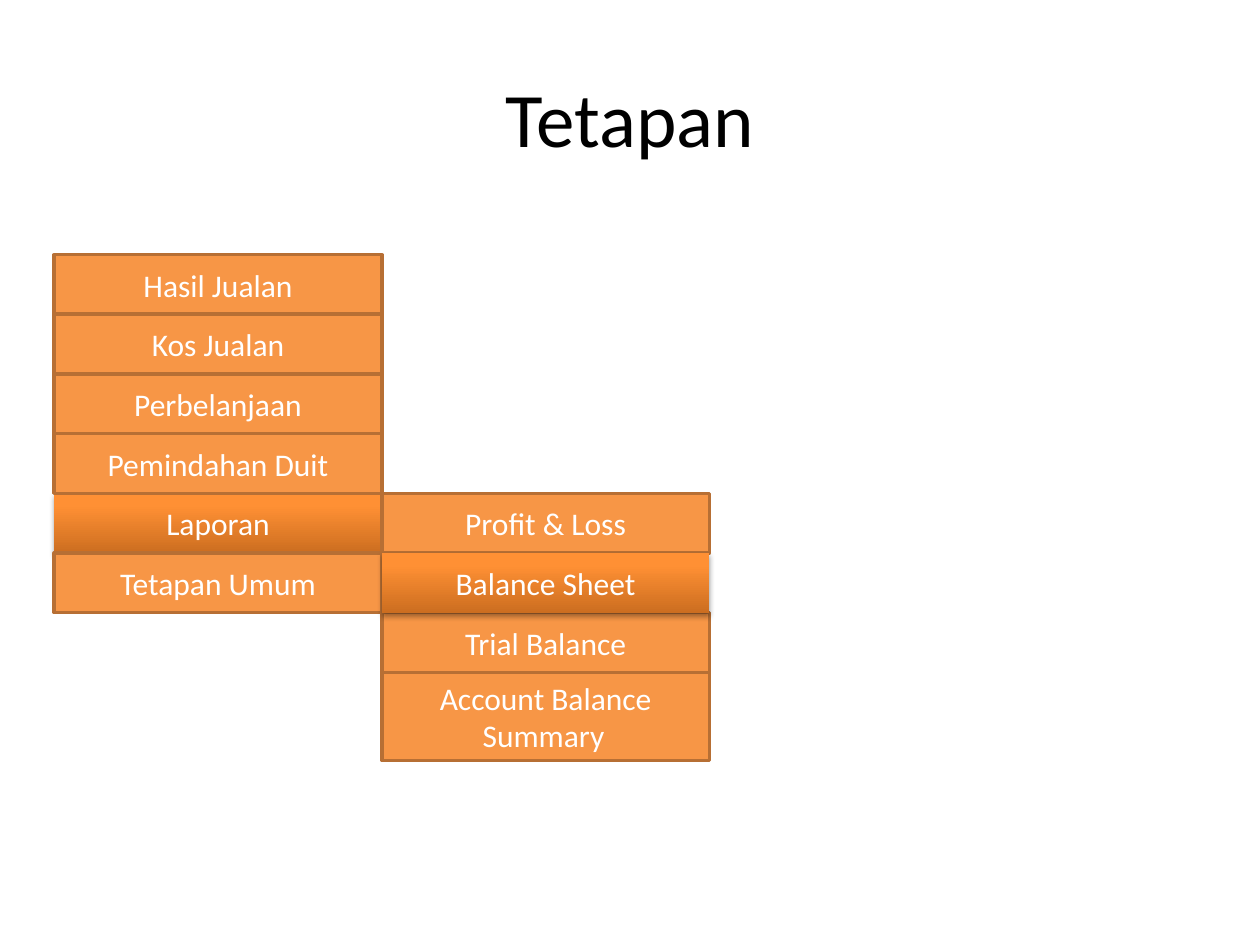
import copy
import dataclasses
import lxml.etree
import pptx
import pptx.dml.color
import pptx.enum.shapes
import pptx.enum.text
import pptx.oxml
import pptx.oxml.ns
import pptx.util

Pt = pptx.util.Pt
qn = pptx.oxml.ns.qn


@dataclasses.dataclass(frozen=True)
class Theme:
    """Colours, font and type sizes of the slide."""
    font: str = "Calibri"
    title: int = 44
    body: int = 18
    ink: str = "000000"
    pale: str = "FFFFFF"
    fill: str = "F79646"
    edge: str = "B76F34"
    glow: tuple = ((0, "CC6E20"), (0.8, "FF9034"), (1, "FF9136"))


THEME = Theme()


def rgb(code):
    """Turn a hex code into a colour."""
    return pptx.dml.color.RGBColor.from_string(code)


def write(shape, text, size, color):
    """Put one centred run of text in a shape."""
    frame = shape.text_frame
    frame.word_wrap = True
    frame.vertical_anchor = pptx.enum.text.MSO_ANCHOR.MIDDLE
    para = frame.paragraphs[0]
    para.alignment = pptx.enum.text.PP_ALIGN.CENTER
    run = para.add_run()
    run.text = text
    run.font.name = THEME.font
    run.font.size = Pt(size)
    run.font.color.rgb = rgb(color)


def shine(shape):
    """Give a shape the gradient and shadow of a chosen item."""
    shape.line.fill.background()
    shape.fill.gradient()
    shape.fill.gradient_angle = 90
    stops = shape._element.spPr.find(".//" + qn("a:gsLst"))
    stops.insert(1, copy.deepcopy(stops[0]))
    for stop, (place, color) in zip(shape.fill.gradient_stops, THEME.glow):
        stop.position = place
        stop.color.rgb = rgb(color)
    effect = shape._element.spPr.find(qn("a:effectLst"))
    shade = lxml.etree.SubElement(
        effect, qn("a:outerShdw"), blurRad=str(Pt(3.1)), dist=str(Pt(1.8)),
        dir="5400000", rotWithShape="0")
    tint = lxml.etree.SubElement(shade, qn("a:srgbClr"), val=THEME.ink)
    lxml.etree.SubElement(tint, qn("a:alpha"), val="35000")


def item(slide, box, text, chosen):
    """Draw one menu item in the given box."""
    shape = slide.shapes.add_shape(
        pptx.enum.shapes.MSO_SHAPE.RECTANGLE, *map(Pt, box))
    shape.shadow.inherit = False
    if chosen:
        shine(shape)
    else:
        shape.fill.solid()
        shape.fill.fore_color.rgb = rgb(THEME.fill)
        shape.line.color.rgb = rgb(THEME.edge)
        shape.line.width = Pt(2)
    write(shape, text, THEME.body, THEME.pale)


def menu(slide, box, labels, chosen, raised=False, last=None):
    """Stack items down from the box of the first, the chosen one behind or raised."""
    left, top, width, high = box
    rows = list(enumerate(labels))
    rows.sort(key=lambda row: (row[1] == chosen) == raised)
    for place, text in rows:
        tall = last if last and place == len(labels) - 1 else high
        item(slide, (left, top + place * high, width, tall), text, text == chosen)


def title(slide, box, text):
    """Write the slide title in the given box."""
    write(slide.shapes.add_textbox(*map(Pt, box)), text, THEME.title, THEME.ink)


def main():
    """Build the slide and save it."""
    deck = pptx.Presentation()
    deck.slide_width, deck.slide_height = Pt(720), Pt(540)
    slide = deck.slides.add_slide(deck.slide_layouts[6])
    title(slide, (36, 21.6, 648, 90), "Tetapan")
    left, top, width, high = 31, 145.5, 187.2, 34.1
    main_items = ("Hasil Jualan", "Kos Jualan", "Perbelanjaan",
                  "Pemindahan Duit", "Laporan", "Tetapan Umum")
    reports = ("Profit & Loss", "Balance Sheet", "Trial Balance",
               "Account Balance Summary\t")
    menu(slide, (left, top, width, high), main_items, "Laporan")
    level = top + main_items.index("Laporan") * high
    menu(slide, (left + width, level, width, high), reports,
         "Balance Sheet", raised=True, last=50.4)
    deck.save("out.pptx")


if __name__ == "__main__":
    main()
